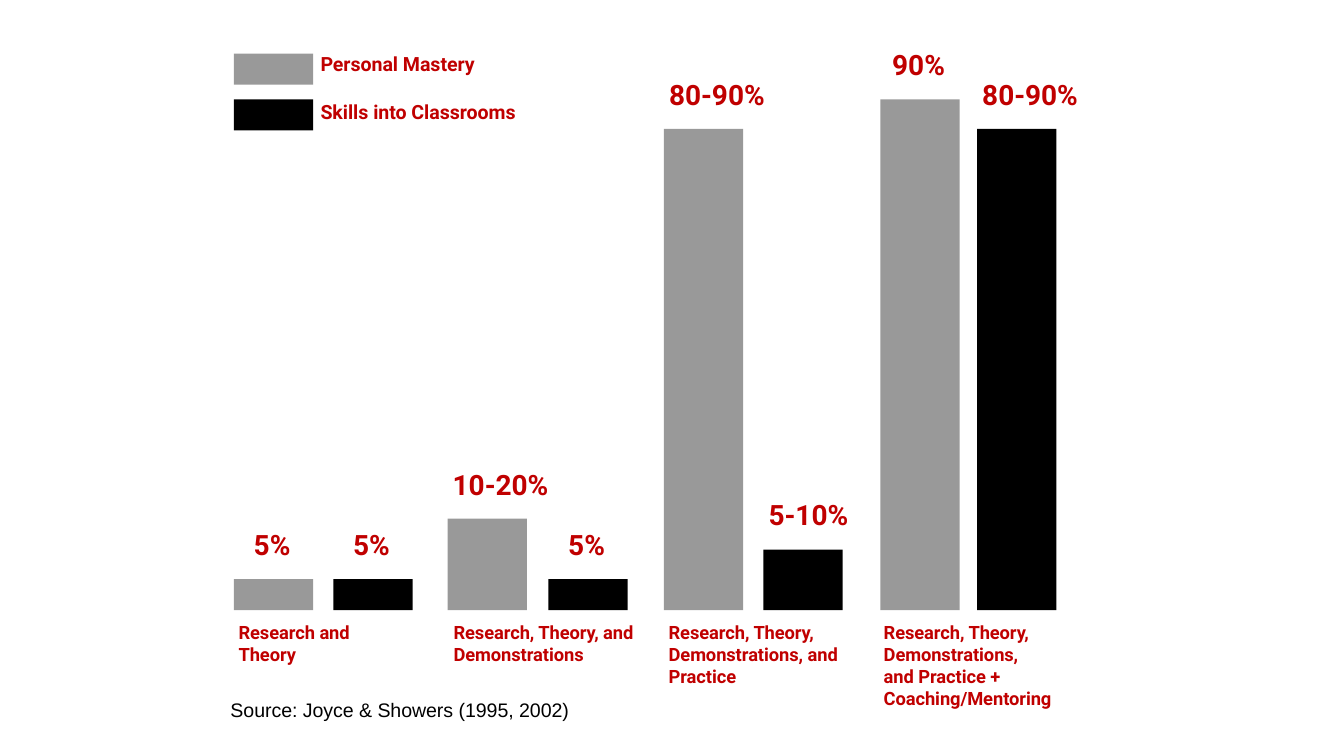
"""Build a slide of training outcomes by type of professional development."""
from pptx import Presentation
from pptx.dml.color import RGBColor
from pptx.enum.shapes import MSO_SHAPE
from pptx.enum.text import MSO_ANCHOR, PP_ALIGN
from pptx.util import Inches, Pt

GRAY = RGBColor(0x99, 0x99, 0x99)
BLACK = RGBColor(0, 0, 0)
RED = RGBColor(0xC0, 0, 0)

LEGEND = [
    ("Personal Mastery", GRAY, 0.4, 0.31, 1.62),
    ("Skills into Classrooms", BLACK, 0.74, 0.67, 2.08),
]
BARS = [
    ("5%", GRAY, 1.74, 0.23),
    ("5%", BLACK, 2.48, 0.23),
    ("10-20%", GRAY, 3.33, 0.68),
    ("5%", BLACK, 4.08, 0.23),
    ("80-90%", GRAY, 4.94, 3.58),
    ("5-10%", BLACK, 5.68, 0.45),
    ("90%", GRAY, 6.55, 3.8),
    ("80-90%", BLACK, 7.27, 3.58),
]
LABEL_WIDTH_AND_SHIFT = {
    "5%": (0.63, -0.01),
    "90%": (0.73, -0.01),
    "5-10%": (0.89, 0.04),
    "10-20%": (1.03, 0.1),
    "80-90%": (1.03, 0.1),
}
CATEGORIES = [
    (["Research and Theory"], 1.39, 0.77),
    (["Research, Theory, and Demonstrations"], 1.7, 0.9),
    (["Research, Theory, Demonstrations, and Practice"], 1.55, 0.9),
    (["Research, Theory,", "Demonstrations,", "and Practice + Coaching/Mentoring"], 1.82, 0.9),
]
SOURCE = "Source: Joyce & Showers (1995, 2002)"

SLIDE_WIDTH = Inches(10)
BASELINE = 4.54
BAR_WIDTH = 0.59
LEGEND_LEFT, LEGEND_HEIGHT = 1.74, 0.23
LABEL_HEIGHT, LABEL_GAP = 0.45, 0.01
CATEGORY_LEFT, CATEGORY_STEP = 1.7, 1.6
MARGIN = Pt(5.4)


def add_bar(page, left, top, height, color):
    bar = page.shapes.add_shape(
        MSO_SHAPE.RECTANGLE, Inches(left), Inches(top), Inches(BAR_WIDTH), Inches(height))
    bar.shadow.inherit = False
    bar.fill.solid()
    bar.fill.fore_color.rgb = color
    bar.line.fill.background()


def add_text(page, lines, left, top, width, height, size,
             align=PP_ALIGN.LEFT, font="Roboto", color=RED, bold=True):
    box = page.shapes.add_textbox(Inches(left), Inches(top), Inches(width), Inches(height))
    frame = box.text_frame
    frame.word_wrap = True
    frame.vertical_anchor = MSO_ANCHOR.TOP
    frame.margin_left = frame.margin_right = MARGIN
    frame.margin_top = frame.margin_bottom = MARGIN
    frame.text = "\n".join(lines)
    for para in frame.paragraphs:
        para.alignment = align
        para.font.name = font
        para.font.size = Pt(size)
        para.font.bold = bold
        para.font.color.rgb = color


def main():
    deck = Presentation()
    deck.slide_width, deck.slide_height = SLIDE_WIDTH, SLIDE_WIDTH * 9 // 16
    page = deck.slides.add_slide(deck.slide_layouts[6])

    for name, color, top, text_top, width in LEGEND:
        add_bar(page, LEGEND_LEFT, top, LEGEND_HEIGHT, color)
        add_text(page, [name], 2.31, text_top, width, 0.33, 10.5)

    for label, color, left, height in BARS:
        top = BASELINE - height
        add_bar(page, left, top, height, color)
        width, shift = LABEL_WIDTH_AND_SHIFT[label]
        label_left = left + (BAR_WIDTH - width) / 2 + shift
        add_text(page, [label], label_left, top - LABEL_HEIGHT - LABEL_GAP, width,
                 LABEL_HEIGHT, 15, PP_ALIGN.CENTER)

    for index, (lines, width, height) in enumerate(CATEGORIES):
        left = CATEGORY_LEFT + index * CATEGORY_STEP
        add_text(page, lines, left, 4.55, width, height, 9.75)

    add_text(page, [SOURCE], 1.64, 5.12, 5.94, 0.69, 10.5,
             font="Arial", color=BLACK, bold=False)
    deck.save("out.pptx")


if __name__ == "__main__":
    main()
